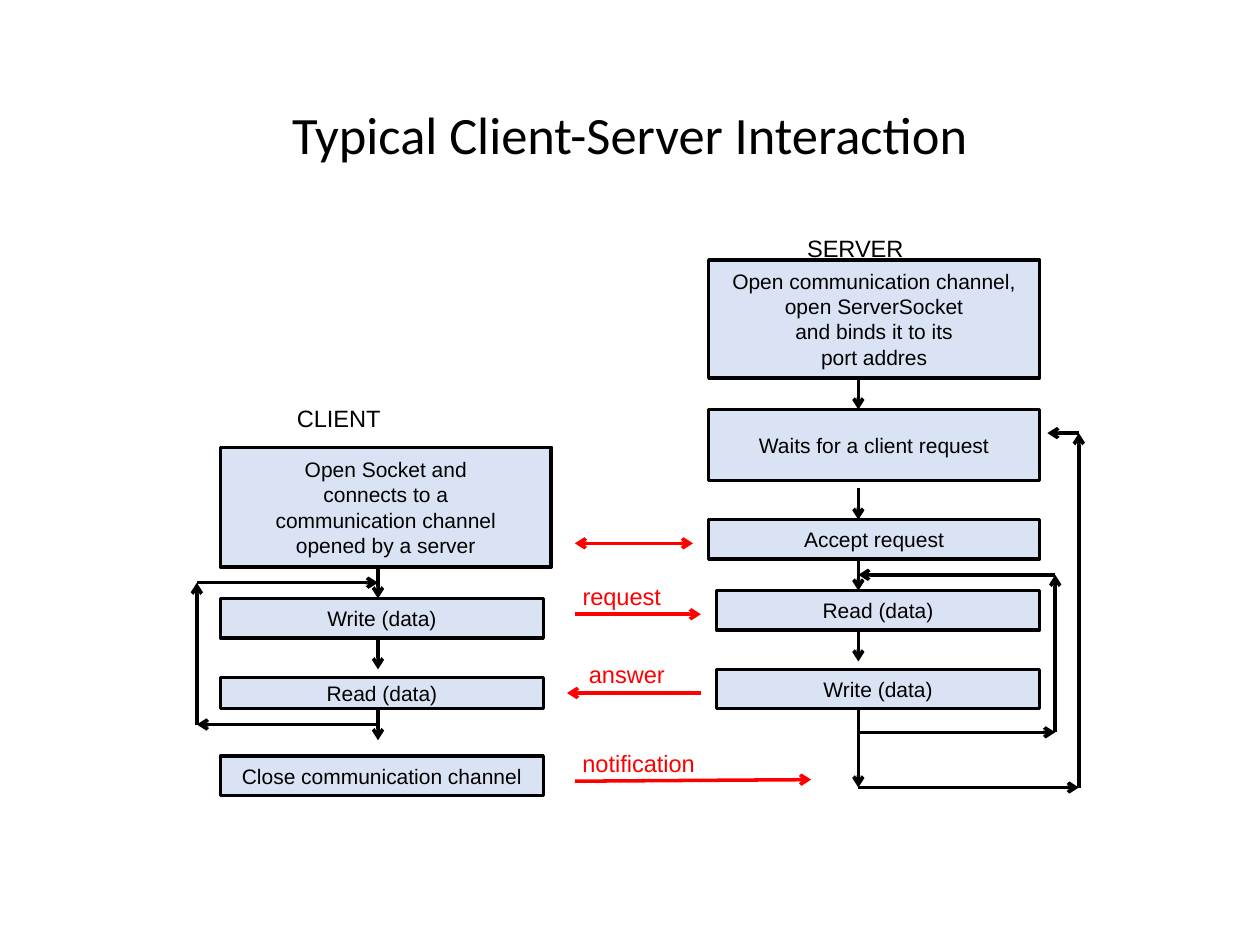
"""Build the slide on client-server interaction."""
import itertools

import pptx
import pptx.dml.color
import pptx.enum.shapes
import pptx.enum.text
import pptx.oxml
import pptx.oxml.ns
import pptx.util

WIDTH, HEIGHT = 10, 7.5
COLUMNS = 160
BLACK, RED, BLUE = "000000", "FF0000", "DAE3F3"
SERVER_X, CLIENT_X = 109, 48

TITLE = ("Typical Client-Server Interaction", 11, 5.8, 138, 23.2)
BOXES = [
    (["Open communication channel,", "open ServerSocket", "and binds it to its", "port addres"],
     90, 33, 42, 15),
    (["Waits for a client request"], 90, 52, 42, 9),
    (["Accept request"], 90, 66, 42, 5),
    (["Read (data)"], 91, 75, 41, 5),
    (["Write (data)"], 91, 85, 41, 5),
    (["Open Socket and", "connects to a", "communication channel", "opened by a server"],
     28, 56.8, 42, 15.2),
    (["Write (data)"], 28, 76, 41, 5),
    (["Read (data)"], 28, 86, 41, 4),
    (["Close communication channel"], 28, 96, 41, 5),
]
LABELS = [
    ("SERVER", 100.8, 28.8, 15.6, BLACK),
    ("CLIENT", 36, 50.4, 14, BLACK),
    ("request", 72.3, 73, 13.3, RED),
    ("answer", 73.1, 83, 13, RED),
    ("notification", 72.2, 94.2, 17.8, RED),
]
STEPS = {
    SERVER_X: [(48, 52), (62, 66), (71, 75), (80, 84)],
    CLIENT_X: [(72, 76), (81, 85), (90, 94)],
}
LOOPS = [
    [(SERVER_X, 90), (SERVER_X, 100), (137, 100), (137, 55), (133, 55)],
    [(SERVER_X, 93), (134, 93), (134, 73), (SERVER_X, 73)],
    [(CLIENT_X, 92), (25, 92), (25, 74), (CLIENT_X, 74)],
]
MESSAGES = [
    ((73, 69), (88, 69), True),
    ((73, 78), (89, 78), False),
    ((89, 88), (72, 88), False),
    ((73, 99.2), (103, 99), False),
]


def rgb(value):
    """Return a colour from a hex string."""
    return pptx.dml.color.RGBColor.from_string(value)


def grid(*units):
    """Turn grid units into slide lengths."""
    return [pptx.util.Inches(u * WIDTH / COLUMNS) for u in units]


def write(sp, lines, size, color=BLACK, font="Arial", wrap=False, spacing=1.0):
    """Write centred lines of text into a shape."""
    tf = sp.text_frame
    frame = {"word_wrap": wrap, "vertical_anchor": pptx.enum.text.MSO_ANCHOR.MIDDLE}
    for name, value in frame.items():
        setattr(tf, name, value)
    tf.text = "\n".join(lines)
    for p in tf.paragraphs:
        p.alignment = pptx.enum.text.PP_ALIGN.CENTER
        p.line_spacing = spacing
        for r in p.runs:
            for name, value in {"size": pptx.util.Pt(size), "name": font}.items():
                setattr(r.font, name, value)
            r.font.color.rgb = rgb(color)


def add_box(s, lines, *place):
    """Add one step of the flow."""
    sp = s.shapes.add_shape(pptx.enum.shapes.MSO_SHAPE.RECTANGLE, *grid(*place))
    sp.shadow.inherit = False
    sp.fill.solid()
    sp.fill.fore_color.rgb = rgb(BLUE)
    sp.line.color.rgb = rgb(BLACK)
    sp.line.width = pptx.util.Pt(2)
    write(sp, lines, 12)


def add_arrow(s, start, end, color=BLACK, both=False):
    """Add a straight arrow, with a head at one end or both."""
    sp = s.shapes.add_connector(
        pptx.enum.shapes.MSO_CONNECTOR.STRAIGHT, *grid(*start, *end))
    sp.line.color.rgb = rgb(color)
    sp.line.width = pptx.util.Pt(2)
    ln = sp.line._get_or_add_ln()
    for tag in ["headEnd", "tailEnd"] if both else ["tailEnd"]:
        ln.append(pptx.oxml.parse_xml(
            f'<a:{tag} {pptx.oxml.ns.nsdecls("a")} type="arrow"/>'))
    sp._element.spPr.append(pptx.oxml.parse_xml(
        f'<a:effectLst {pptx.oxml.ns.nsdecls("a")}/>'))


def main():
    """Build and save the slide."""
    prs = pptx.Presentation()
    prs.slide_width, prs.slide_height = map(pptx.util.Inches, (WIDTH, HEIGHT))
    s = prs.slides.add_slide(prs.slide_layouts[6])

    text, *place = TITLE
    write(s.shapes.add_textbox(*grid(*place)), [text], 30,
          font="Calibri", wrap=True, spacing=0.9)
    for lines, *place in BOXES:
        add_box(s, lines, *place)
    for text, x, y, width, color in LABELS:
        write(s.shapes.add_textbox(*grid(x, y, width, 5.3)), [text], 13.5, color)
    for x, spans in STEPS.items():
        for top, bottom in spans:
            add_arrow(s, (x, top), (x, bottom))
    for points in LOOPS:
        for start, end in itertools.pairwise(points):
            add_arrow(s, start, end)
    for start, end, both in MESSAGES:
        add_arrow(s, start, end, RED, both)

    prs.save("out.pptx")


if __name__ == "__main__":
    main()
